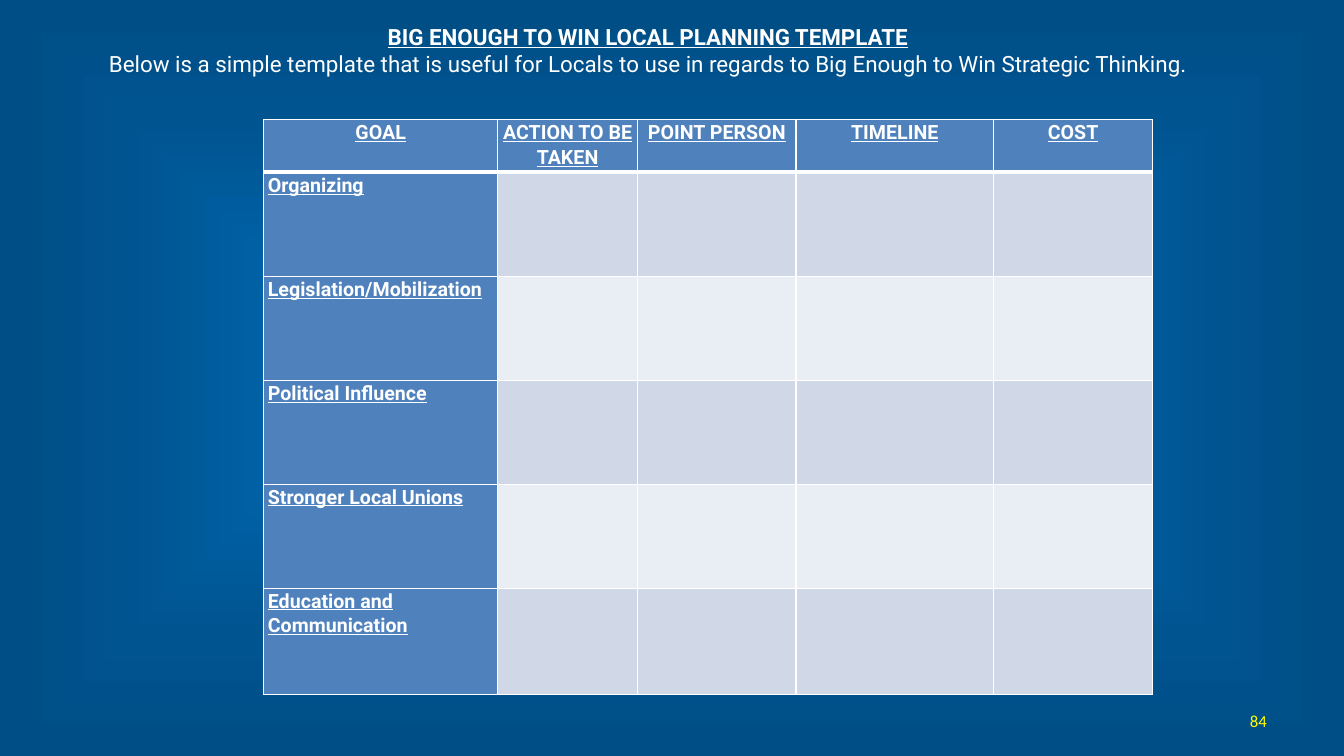
from pptx import Presentation
from pptx.dml.color import RGBColor
from pptx.enum import text as t
from pptx.oxml import parse_xml
from pptx.util import Cm, Pt

TITLE = "BIG ENOUGH TO WIN LOCAL PLANNING TEMPLATE"
INTRO = ("Below is a simple template that is useful for Locals to use "
         "in regards to Big Enough to Win Strategic Thinking.")
HEADS = ["GOAL", "ACTION TO BE TAKEN", "POINT PERSON", "TIMELINE", "COST"]
GOALS = ["Organizing", "Legislation/Mobilization", "Political Influence",
         "Stronger Local Unions", "Education and Communication"]
PAGE = "84"

WIDTHS = [5.89, 3.53, 3.99, 4.98, 4.01]
HEIGHTS = [1.32] + [2.62] * 4 + [2.69]

THEME = {
    "font": "Roboto", "page_font": "Calibri",
    "title": 16, "cell": 14, "page": 12,
    "white": "FFFFFF", "yellow": "FFFF00", "head": "4F81BD",
    "bands": ["D0D8E8", "E9EDF4"],
    "glow": [(0, "0064AB"), (23, "0064AB"), (69, "005490"), (97, "004E86")],
}
NS = "http://schemas.openxmlformats.org/drawingml/2006/main"
ALIGN = t.PP_ALIGN


def write(para, words, size, font=THEME["font"], color=THEME["white"],
          strong=False, align=ALIGN.CENTER, lead=None):
    """Fill a paragraph; strong text is bold and underlined."""
    para.alignment = align
    if lead:
        para.line_spacing = lead
    run = para.add_run()
    run.text = words
    run.font.name, run.font.size = font, Pt(size)
    run.font.bold = run.font.underline = strong
    run.font.color.rgb = RGBColor.from_string(color)


def add_box(slide, left, top, width, height, anchor):
    frame = slide.shapes.add_textbox(
        Cm(left), Cm(top), Cm(width), Cm(height)).text_frame
    frame.word_wrap = True
    frame.vertical_anchor = anchor
    return frame


def glow(slide):
    """Set the background to a gradient spreading from the centre."""
    slide.background.fill.solid()
    fill = slide.background._cSld.bg.bgPr[0]
    stops = "".join(f'<a:gs pos="{pos * 1000}"><a:srgbClr val="{color}"/></a:gs>'
                    for pos, color in THEME["glow"])
    fill.getparent().replace(fill, parse_xml(
        f'<a:gradFill xmlns:a="{NS}" rotWithShape="1"><a:gsLst>{stops}</a:gsLst>'
        '<a:path path="shape"><a:fillToRect l="50000" t="50000" r="50000" b="50000"/>'
        '</a:path></a:gradFill>'))


def edge(cell, row):
    """Draw white cell borders, thick between the heads and the body."""
    thick = {(0, "B"), (1, "T")}
    for spot, side in enumerate("LRTB"):
        width = Pt(3 if (row, side) in thick else 1)
        cell._tc.get_or_add_tcPr().insert(spot, parse_xml(
            f'<a:ln{side} xmlns:a="{NS}" w="{width}"><a:solidFill>'
            f'<a:srgbClr val="{THEME["white"]}"/></a:solidFill></a:ln{side}>'))


def add_plan(slide):
    table = slide.shapes.add_table(
        len(HEIGHTS), len(WIDTHS), Cm(6.65), Cm(3.02),
        Cm(sum(WIDTHS)), Cm(sum(HEIGHTS))).table
    for col, width in zip(table.columns, WIDTHS):
        col.width = Cm(width)
    for line, height in zip(table.rows, HEIGHTS):
        line.height = Cm(height)
    rows = [HEADS] + [[goal] + [""] * (len(HEADS) - 1) for goal in GOALS]
    for r, row in enumerate(rows):
        for c, words in enumerate(row):
            cell = table.cell(r, c)
            cell.margin_left = cell.margin_right = Cm(0.1)
            cell.margin_top = cell.margin_bottom = 0
            cell.fill.solid()
            color = THEME["head"] if words else THEME["bands"][(r - 1) % 2]
            cell.fill.fore_color.rgb = RGBColor.from_string(color)
            edge(cell, r)
            if words:
                write(cell.text_frame.paragraphs[0], words, THEME["cell"],
                      strong=True, lead=1.07,
                      align=ALIGN.LEFT if r else ALIGN.CENTER)


def main():
    deck = Presentation()
    deck.slide_width, deck.slide_height = Cm(33.87), Cm(19.05)
    slide = deck.slides.add_slide(deck.slide_layouts[6])
    glow(slide)
    add_plan(slide)

    top = add_box(slide, 1.09, 0.58, 30.48, 3.1, t.MSO_ANCHOR.TOP)
    top.margin_top = 0
    write(top.paragraphs[0], TITLE, THEME["title"], strong=True)
    write(top.add_paragraph(), INTRO, THEME["title"])

    foot = add_box(slide, 24.28, 17.65, 7.9, 1.02, t.MSO_ANCHOR.MIDDLE)
    write(foot.paragraphs[0], PAGE, THEME["page"], font=THEME["page_font"],
          color=THEME["yellow"], align=ALIGN.RIGHT)
    deck.save("out.pptx")


if __name__ == "__main__":
    main()
